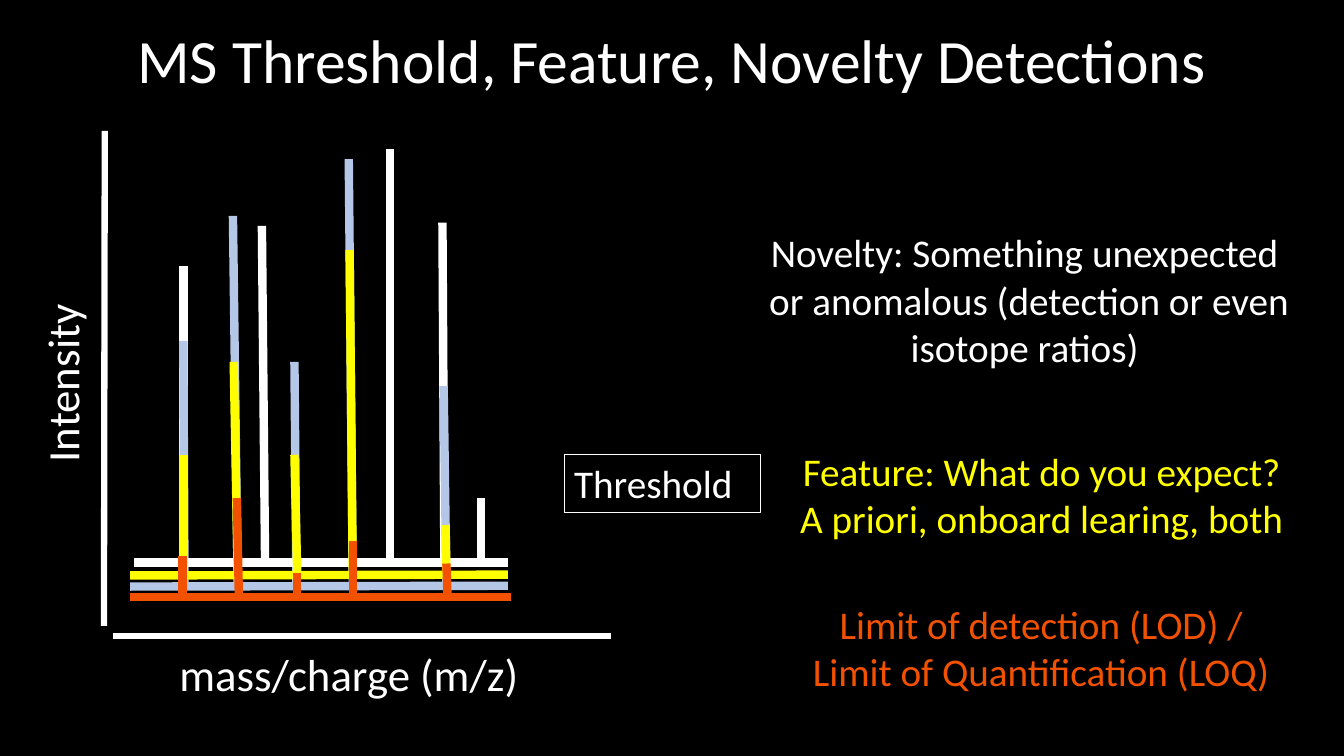
"""Build the slide on threshold, feature and novelty detections in a mass spectrum."""
from pptx import Presentation
from pptx.dml.color import RGBColor
from pptx.enum.shapes import MSO_CONNECTOR
from pptx.enum.text import MSO_ANCHOR, PP_ALIGN
from pptx.oxml.ns import qn
from pptx.util import Cm, Pt

BLACK = RGBColor(0x00, 0x00, 0x00)
WHITE = RGBColor(0xFF, 0xFF, 0xFF)
BLUE = RGBColor(0xB4, 0xC7, 0xE7)
YELLOW = RGBColor(0xFF, 0xFF, 0x00)
ORANGE = RGBColor(0xF2, 0x51, 0x00)
LEFT, CENTER = PP_ALIGN.LEFT, PP_ALIGN.CENTER


def add_line(s, ends, color, width):
    x1, y1, x2, y2 = [Cm(v) for v in ends]
    line = s.shapes.add_connector(MSO_CONNECTOR.STRAIGHT, x1, y1, x2, y2)
    line.line.color.rgb = color
    line.line.width = Pt(width)
    spPr = line._element.spPr
    spPr.append(spPr.makeelement(qn("a:effectLst"), {}))


def add_text(s, box, lines, size, color, align):
    sp = s.shapes.add_textbox(*[Cm(v) for v in box])
    tf = sp.text_frame
    tf.word_wrap = True
    tf.text = "\n".join(lines)
    for p in tf.paragraphs:
        p.alignment = align
        p.font.name = "Calibri"
        p.font.size = Pt(size)
        p.font.color.rgb = color
    return sp


prs = Presentation()
prs.slide_width, prs.slide_height = Cm(33.87), Cm(19.05)
s = prs.slides.add_slide(prs.slide_layouts[6])
s.background.fill.solid()
s.background.fill.fore_color.rgb = BLACK

title = add_text(s, (0, 0, 33.87, 3.18), ["MS Threshold, Feature, Novelty Detections"], 44, WHITE, CENTER)
title.text_frame.vertical_anchor = MSO_ANCHOR.MIDDLE
title.text_frame.paragraphs[0].line_spacing = 0.9

explanations = [
    ((19.91, 15.01, 12.65, 2.64), ["Limit of detection (LOD) / Limit of Quantification (LOQ)"], ORANGE),
    ((18.92, 11.15, 14.66, 2.64), ["Feature: What do you expect?", "A priori, onboard learing, both"], YELLOW),
    ((18.49, 5.64, 14.66, 3.84),
     ["Novelty: Something unexpected", " or anomalous (detection or even isotope ratios)"], WHITE),
]
for box, lines, color in explanations:
    add_text(s, box, lines, 28, color, CENTER)

threshold = add_text(s, (14.22, 11.46, 4.95, 1.45), ["Threshold"], 28, WHITE, LEFT)
threshold.line.color.rgb = WHITE
threshold.line.width = Pt(0.75)

for axis in [(2.84, 16.03, 15.39, 16.03), (2.62, 15.77, 2.64, 3.3)]:
    add_line(s, axis, WHITE, 4.5)
add_text(s, (4.27, 16.18, 9.93, 1.63), ["mass/charge (m/z)"], 32, WHITE, LEFT)
intensity = add_text(s, (-0.81, 8.71, 4.75, 1.63), ["Intensity"], 32, WHITE, LEFT)
intensity.rotation = 270

spectra = [
    (WHITE, [(4.62, 14.17, 4.62, 6.71), (11.2, 14.1, 11.15, 5.61)]),
    (BLUE, [
        (4.65, 14.76, 4.62, 8.59),
        (3.28, 14.78, 12.8, 14.76),
        (5.99, 14.78, 5.87, 5.44),
        (7.47, 14.73, 7.42, 9.12),
        (8.79, 4.01, 8.89, 14.73),
        (11.18, 9.73, 11.25, 14.76),
    ]),
    (WHITE, [
        (3.38, 14.17, 12.8, 14.17),
        (6.68, 14.17, 6.6, 5.69),
        (9.83, 14.17, 9.83, 3.76),
        (12.12, 12.55, 12.12, 14.22),
    ]),
    (YELLOW, [
        (3.28, 14.5, 12.8, 14.48),
        (4.62, 14.48, 4.62, 11.46),
        (5.89, 9.12, 5.99, 14.45),
        (7.42, 11.46, 7.49, 14.45),
        (8.81, 6.3, 8.89, 14.45),
        (11.25, 14.45, 11.23, 13.23),
    ]),
    (ORANGE, [
        (3.28, 15.04, 12.88, 15.04),
        (4.6, 14.02, 4.6, 15.06),
        (4.8, 15.04, 5.66, 15.04),
        (5.97, 12.55, 6.02, 15.06),
        (7.49, 14.43, 7.49, 15.06),
        (8.89, 13.64, 8.89, 15.04),
        (11.25, 14.2, 11.28, 15.11),
    ]),
]
add_line(s, (6.99, 14.15, 9.78, 14.12), WHITE, 3)
for color, peaks in spectra:
    for peak in peaks:
        add_line(s, peak, color, 6)

prs.save("out.pptx")
